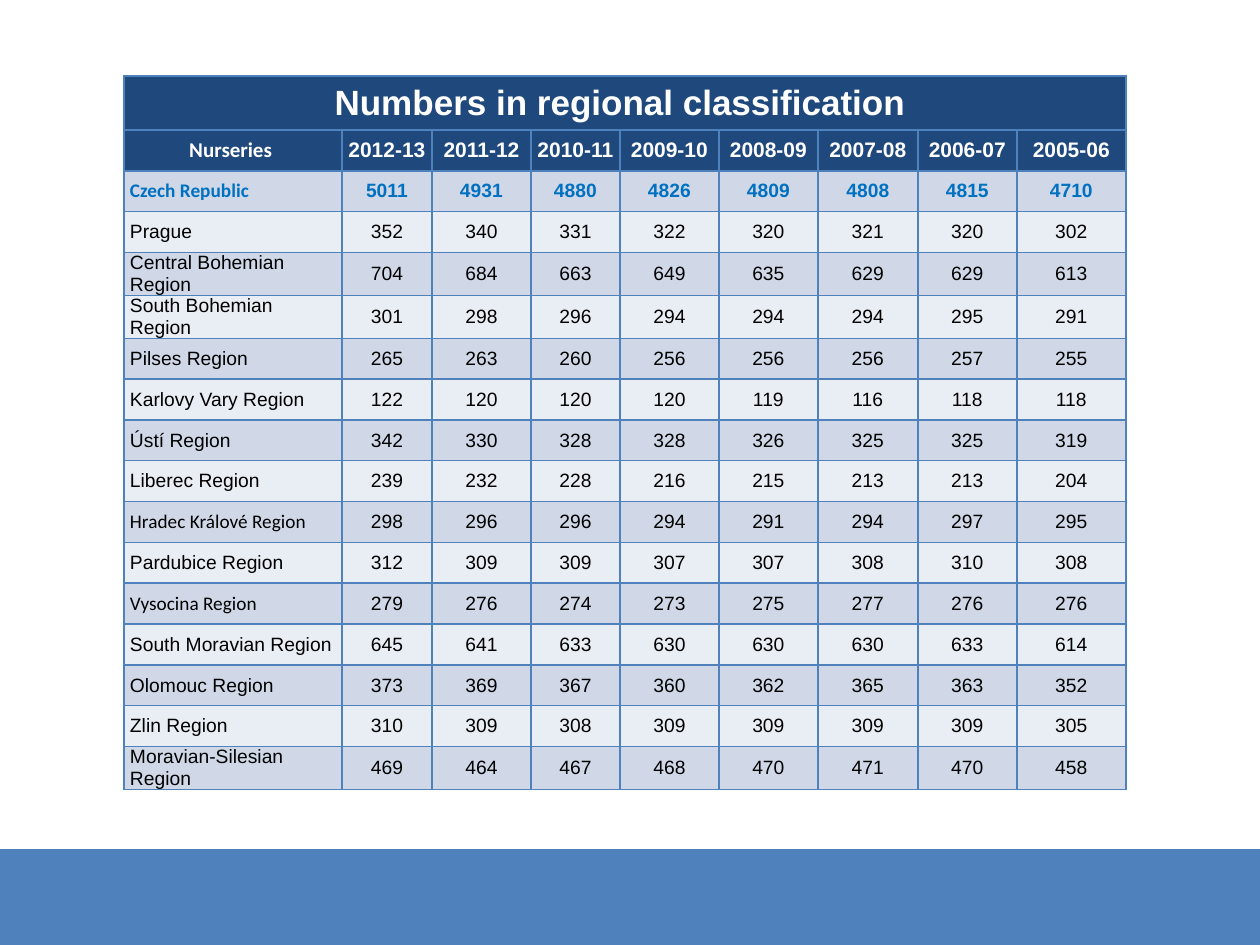
"""Build a slide with a regional table of nursery numbers by school year."""
from dataclasses import dataclass

from lxml.etree import SubElement
from pptx import Presentation
from pptx.dml.color import RGBColor
from pptx.enum.shapes import MSO_SHAPE
from pptx.enum.text import MSO_ANCHOR, PP_ALIGN
from pptx.oxml.ns import qn
from pptx.util import Pt

SCALE = 914400 / 126
SLIDE_SIZE = (1260, 945)
HEADING = "Numbers in regional classification "
YEARS = ["Nurseries "] + [f"{year}-{year % 100 + 1:02d}" for year in range(2012, 2004, -1)]
REGIONS = [
    ("Czech Republic", 5011, 4931, 4880, 4826, 4809, 4808, 4815, 4710),
    ("Prague", 352, 340, 331, 322, 320, 321, 320, 302),
    ("Central Bohemian Region", 704, 684, 663, 649, 635, 629, 629, 613),
    ("South Bohemian Region", 301, 298, 296, 294, 294, 294, 295, 291),
    ("Pilses Region", 265, 263, 260, 256, 256, 256, 257, 255),
    ("Karlovy Vary Region", 122, 120, 120, 120, 119, 116, 118, 118),
    ("Ústí Region", 342, 330, 328, 328, 326, 325, 325, 319),
    ("Liberec Region", 239, 232, 228, 216, 215, 213, 213, 204),
    ("Hradec Králové Region", 298, 296, 296, 294, 291, 294, 297, 295),
    ("Pardubice Region", 312, 309, 309, 307, 307, 308, 310, 308),
    ("Vysocina Region", 279, 276, 274, 273, 275, 277, 276, 276),
    ("South Moravian Region", 645, 641, 633, 630, 630, 630, 633, 614),
    ("Olomouc Region", 373, 369, 367, 360, 362, 365, 363, 352),
    ("Zlin Region", 310, 309, 308, 309, 309, 309, 309, 305),
    ("Moravian-Silesian Region", 469, 464, 467, 468, 470, 471, 470, 458),
]
CALIBRI_LABELS = {"Nurseries ", "Czech Republic", "Hradec Králové Region", "Vysocina Region"}
COLUMN_WIDTHS = [218, 90, 99, 89, 99, 99, 100, 99, 109]
HEADING_HEIGHT = 54
TABLE_BOX = (124, 76, sum(COLUMN_WIDTHS), 708)


@dataclass(frozen=True)
class Theme:
    """Colours, fonts and type sizes of the slide."""
    accent: str = "4F81BD"
    header: str = "1F497D"
    bands: tuple = ("D0D8E8", "E9EDF4")
    total: str = "0070C0"
    light: str = "FFFFFF"
    dark: str = "000000"
    font: str = "Arial"
    label_font: str = "Calibri"
    heading_size: int = 20
    header_size: int = 12
    body_size: int = 11
    border: int = 1


def px(length):
    """Turn pixels into EMU."""
    return round(length * SCALE)


def apply_format(target, values):
    """Set each named attribute on the target."""
    for attribute, value in values.items():
        setattr(target, attribute, value)


class SlideBuilder:
    """Draw the elements of one slide in one theme."""

    def __init__(self, slide, theme):
        """Keep the slide and its theme."""
        self.slide = slide
        self.theme = theme

    def band(self, left, top, width, height):
        """Add a plain accent rectangle."""
        footer = self.slide.shapes.add_shape(
            MSO_SHAPE.RECTANGLE, *map(px, (left, top, width, height)))
        footer.shadow.inherit = False
        footer.fill.solid()
        footer.fill.fore_color.rgb = RGBColor.from_string(self.theme.accent)
        footer.line.fill.background()

    def table(self, box, heading, rows):
        """Add the table with a merged heading above the given rows."""
        regional = self.slide.shapes.add_table(
            len(rows) + 1, len(rows[0]), *map(px, box)).table
        apply_format(regional, {"first_row": False, "horz_banding": False})
        for column, width in zip(regional.columns, COLUMN_WIDTHS):
            column.width = px(width)
        for row in regional.rows:
            row.height = px(box[3] - HEADING_HEIGHT) // len(rows)
        regional.rows[0].height = px(HEADING_HEIGHT)
        regional.cell(0, 0).merge(regional.cell(0, len(rows[0]) - 1))
        heading_row = [heading] + [""] * (len(rows[0]) - 1)
        for r, values in enumerate([heading_row] + rows):
            for c, value in enumerate(values):
                self.cell(regional.cell(r, c), str(value), r, c)

    def cell(self, cell, wording, r, c):
        """Style and fill one cell by its row and column."""
        theme = self.theme
        side, edge = (13, 6) if r == 0 else (6, 0)
        apply_format(cell, {
            "margin_left": px(side), "margin_right": px(side),
            "margin_top": px(edge), "margin_bottom": px(edge),
            "vertical_anchor": MSO_ANCHOR.MIDDLE,
        })
        self.borders(cell)
        cell.fill.solid()
        cell.fill.fore_color.rgb = RGBColor.from_string(
            theme.header if r < 2 else theme.bands[r % 2])
        if not wording:
            return
        paragraph = cell.text_frame.paragraphs[0]
        paragraph.alignment = PP_ALIGN.LEFT if c == 0 and r > 1 else PP_ALIGN.CENTER
        run = paragraph.add_run()
        run.text = wording
        size = {0: theme.heading_size, 1: theme.header_size}.get(r, theme.body_size)
        color = {0: theme.light, 1: theme.light, 2: theme.total}.get(r, theme.dark)
        apply_format(run.font, {
            "name": theme.label_font if wording in CALIBRI_LABELS else theme.font,
            "size": Pt(size),
            "bold": r < 3,
        })
        run.font.color.rgb = RGBColor.from_string(color)

    def borders(self, cell):
        """Draw an accent line on all four sides of a cell."""
        properties = cell._tc.get_or_add_tcPr()
        for side in ("a:lnL", "a:lnR", "a:lnT", "a:lnB"):
            line = SubElement(properties, qn(side), w=str(Pt(self.theme.border)))
            fill = SubElement(line, qn("a:solidFill"))
            SubElement(fill, qn("a:srgbClr"), val=self.theme.accent)


def main():
    """Build and save the presentation."""
    presentation = Presentation()
    width, height = SLIDE_SIZE
    apply_format(presentation, {"slide_width": px(width), "slide_height": px(height)})
    slide = presentation.slides.add_slide(presentation.slide_layouts[6])
    builder = SlideBuilder(slide, Theme())
    builder.band(0, 849, width, height - 849)
    builder.table(TABLE_BOX, HEADING, [YEARS] + REGIONS)
    presentation.save("out.pptx")


if __name__ == "__main__":
    main()
